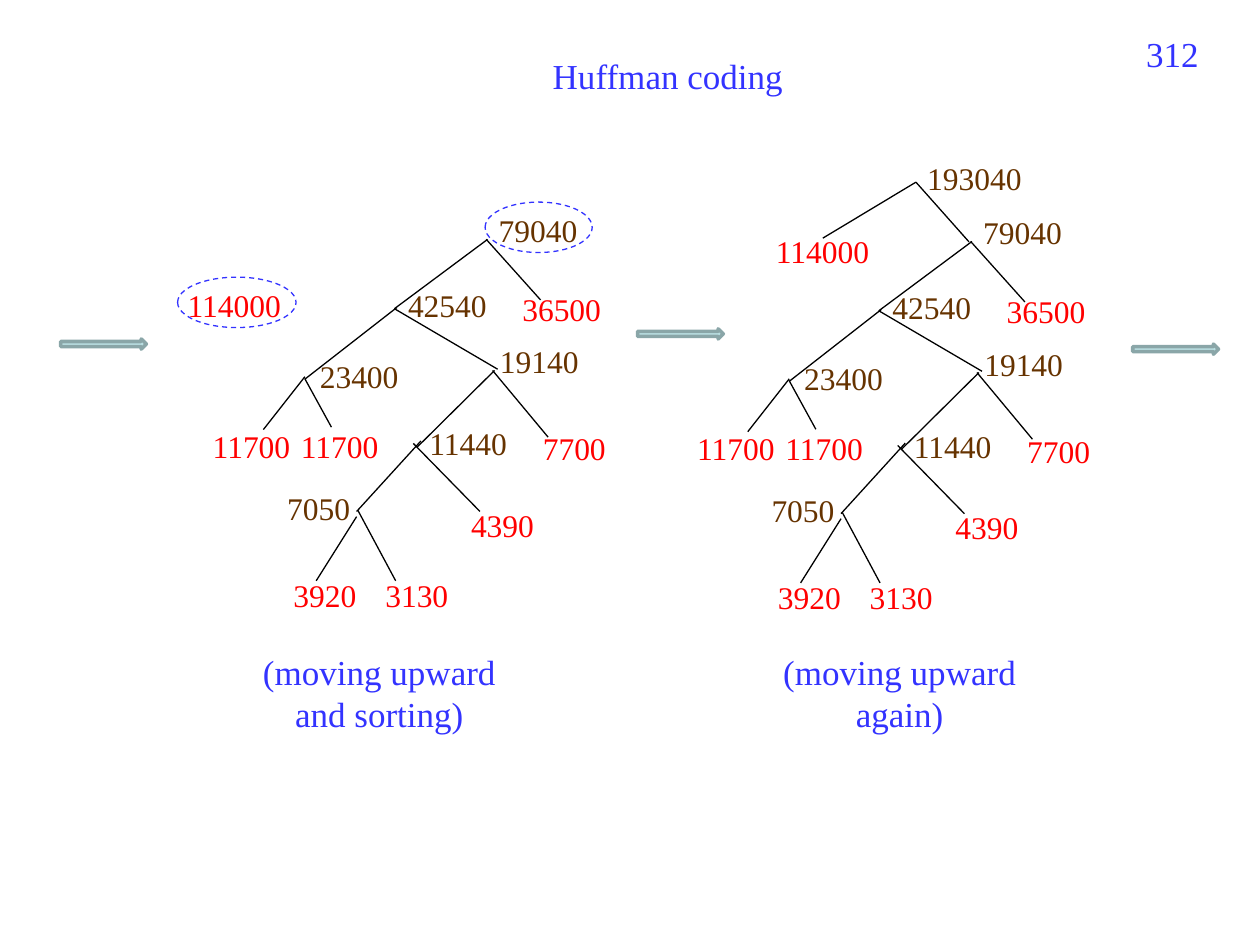
import dataclasses
import pptx
import pptx.dml.color
import pptx.enum.dml
import pptx.enum.shapes
import pptx.enum.text
import pptx.oxml.ns
import pptx.util
from lxml import etree

Pt = pptx.util.Pt
RGB = pptx.dml.color.RGBColor.from_string
SHAPE = pptx.enum.shapes.MSO_SHAPE
ALIGN = pptx.enum.text.PP_ALIGN
AUTO = pptx.enum.text.MSO_AUTO_SIZE


@dataclasses.dataclass(frozen=True)
class Theme:
    font: str = "Times New Roman"
    heading_size: int = 20
    label_size: int = 18
    heading: str = "3333FF"
    leaf: str = "FF0000"
    node: str = "663300"
    edge: str = "000000"
    arrow_fill: str = "BBE0E3"
    arrow_line: str = "8AA6A8"
    thin: float = 0.75
    thick: float = 2


class Board:
    """Draws trees, labels and arrows on one slide in one theme."""

    def __init__(self, slide, theme):
        self.s = slide
        self.theme = theme

    def text(self, text, x, y, w, h, size, color, align, wrap=True, auto=AUTO.SHAPE_TO_FIT_TEXT):
        sp = self.s.shapes.add_textbox(Pt(x), Pt(y), Pt(w), Pt(h))
        tf = sp.text_frame
        tf.word_wrap = wrap
        tf.auto_size = auto
        p = tf.paragraphs[0]
        p.alignment = align
        r = p.add_run()
        r.text = text
        r.font.name = self.theme.font
        r.font.size = Pt(size)
        r.font.color.rgb = RGB(color)

    def heading(self, text, x, y, w, h, align=ALIGN.CENTER, auto=AUTO.SHAPE_TO_FIT_TEXT):
        self.text(text, x, y, w, h, self.theme.heading_size, self.theme.heading, align, auto=auto)

    def weight(self, text, x, y, color):
        width = 14.4 + 9 * len(text)
        self.text(text, x, y, width, 28.8, self.theme.label_size, color, ALIGN.LEFT, wrap=False)

    def shape(self, kind, x, y, w, h, line, width):
        sp = self.s.shapes.add_shape(kind, Pt(x), Pt(y), Pt(w), Pt(h))
        sp.shadow.inherit = False
        sp.line.color.rgb = RGB(line)
        sp.line.width = Pt(width)
        return sp

    def arrow(self, x, y):
        sp = self.shape(SHAPE.RIGHT_ARROW, x, y, 49, 5.8, self.theme.arrow_line, self.theme.thick)
        sp.fill.solid()
        sp.fill.fore_color.rgb = RGB(self.theme.arrow_fill)

    def ring(self, x, y, w):
        sp = self.shape(SHAPE.OVAL, x, y, w, 28.8, self.theme.heading, self.theme.thin)
        sp.fill.background()
        sp.line.dash_style = pptx.enum.dml.MSO_LINE.DASH

    def edge(self, x1, y1, x2, y2):
        sp = self.s.shapes.add_connector(
            pptx.enum.shapes.MSO_CONNECTOR.STRAIGHT, Pt(x1), Pt(y1), Pt(x2), Pt(y2))
        sp.line.color.rgb = RGB(self.theme.edge)
        sp.line.width = Pt(self.theme.thin)
        etree.SubElement(sp._element.spPr, pptx.oxml.ns.qn("a:effectLst"))

    def tree(self, dx, dy):
        for x1, y1, x2, y2 in EDGES:
            self.edge(x1 + dx, y1 + dy, x2 + dx, y2 + dy)
        for color, labels in ((self.theme.node, NODES), (self.theme.leaf, LEAVES)):
            for text, x, y in labels:
                self.weight(text, x + dx, y + dy, color)


EDGES = [
    (240.5, 252, 203.8, 292.3),
    (236.2, 253.4, 274.3, 292.3),
    (203.8, 295.2, 180.7, 331.9),
    (204.5, 291.6, 226.1, 331.9),
    (281.5, 211.7, 313.2, 249.8),
    (282.6, 211.7, 238.3, 255.6),
    (174.2, 215.3, 150.5, 245.5),
    (174.2, 216.4, 189.4, 244.1),
    (226.8, 175.7, 174.2, 216.7),
    (225.4, 176.4, 284.4, 211),
    (225.4, 176.4, 278.6, 136.8),
    (308.9, 171.4, 277.9, 136.8),
]
NODES = [
    ("79040", 277.9, 117.2),
    ("42540", 226.1, 159.8),
    ("23400", 175.7, 200.2),
    ("19140", 278.6, 192.2),
    ("11440", 238.3, 239),
    ("7050", 157, 275.8),
]
LEAVES = [
    ("36500", 291.4, 162),
    ("11700", 114.5, 240.5),
    ("11700", 164.9, 240.5),
    ("7700", 303.1, 241.9),
    ("4390", 262.1, 285.8),
    ("3920", 160.6, 325.4),
    ("3130", 213.1, 325.4),
]


def main():
    prs = pptx.Presentation()
    prs.slide_width, prs.slide_height = Pt(720), Pt(540)
    theme = Theme()
    board = Board(prs.slides.add_slide(prs.slide_layouts[6]), theme)

    board.heading("312", 524.2, 15.1, 167.8, 37.4, ALIGN.RIGHT, AUTO.NONE)
    board.heading("Huffman coding", 200.9, 27.4, 361.4, 31.7)
    for x, y in ((34.6, 193.7), (364.3, 187.9), (647.3, 196.6)):
        board.arrow(x, y)

    board.tree(0, 0)
    board.weight("114000", 100.1, 159.8, theme.leaf)
    board.ring(277.2, 115.5, 61.2)
    board.ring(101.5, 158.4, 67.7)

    board.tree(276.8, 1.2)
    board.weight("114000", 436.3, 128.9, theme.leaf)
    board.weight("193040", 522.7, 87.1, theme.node)
    board.edge(470.2, 136.1, 523.4, 104.1)
    board.edge(553.7, 138.2, 523.4, 104.1)

    board.heading("(moving upward and sorting)", 142.6, 368, 148.3, 55.4)
    board.heading("(moving upward again)", 439.9, 368, 148.3, 55.4)
    prs.save("out.pptx")


if __name__ == "__main__":
    main()
